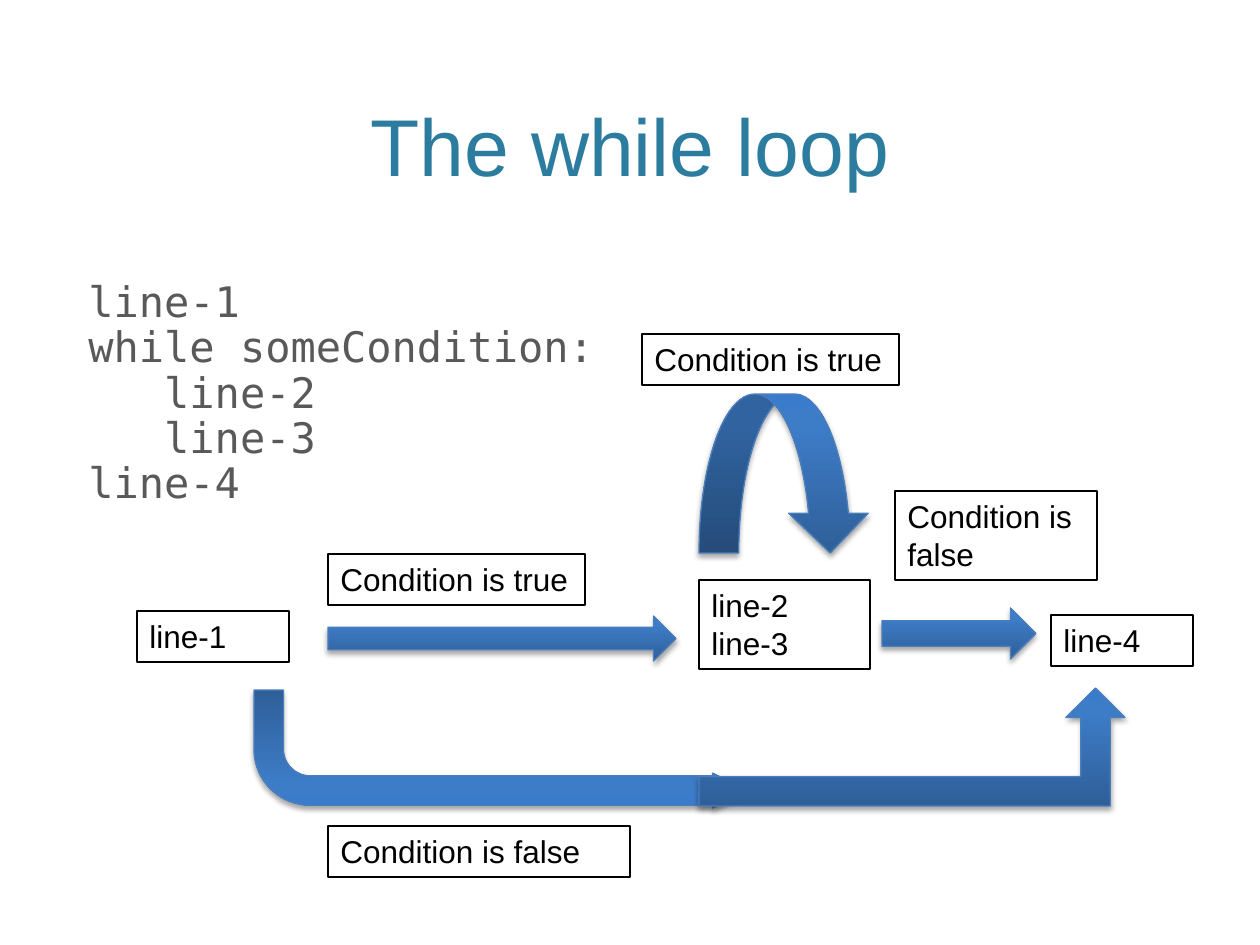
from dataclasses import dataclass

from lxml import etree
from pptx import Presentation
from pptx import util as u
from pptx.dml.color import RGBColor
from pptx.enum import shapes, text
from pptx.oxml.ns import qn

SCALE = 914400 / 126  # EMU per px


@dataclass(frozen=True)
class Theme:
    sans: str = "Arial"
    mono: str = "DejaVu Sans Mono"
    title_size: int = 46
    code_size: int = 24
    label_size: int = 18
    title: str = "2C7C9F"
    code: str = "595959"
    label: str = "000000"
    arrow_line: str = "4B7EBC"
    arrow_stops: tuple = ((0, "2F5F99"), (80, "3D7CC7"), (100, "3A7CCB"))


THEME = Theme()


def px(n):
    return u.Emu(round(n * SCALE))


def rgb(value):
    return RGBColor.from_string(value)


def add_text(slide, box, lines, font, size, color):
    sp = slide.shapes.add_textbox(*map(px, box))
    tf = sp.text_frame
    tf.word_wrap = True
    tf.text = "\n".join(lines)
    for p in tf.paragraphs:
        p.font.name, p.font.size = font, u.Pt(size)
        p.font.color.rgb = rgb(color)
    return sp


def add_title(slide, box, title):
    sp = add_text(slide, box, [title], THEME.sans, THEME.title_size, THEME.title)
    sp.text_frame.vertical_anchor = text.MSO_ANCHOR.BOTTOM
    sp.text_frame.paragraphs[0].alignment = text.PP_ALIGN.CENTER


def add_code(slide, box, lines):
    sp = add_text(slide, box, lines, THEME.mono, THEME.code_size, THEME.code)
    for p in sp.text_frame.paragraphs:
        p.line_spacing = 0.9


def add_label(slide, box, *lines):
    sp = add_text(slide, box, lines, THEME.sans, THEME.label_size, THEME.label)
    sp.text_frame.auto_size = text.MSO_AUTO_SIZE.SHAPE_TO_FIT_TEXT
    sp.line.color.rgb = rgb(THEME.label)
    sp.line.width = u.Pt(0.75)


def add_color(parent, value):
    return etree.SubElement(parent, qn("a:srgbClr"), val=value)


def add_arrow(slide, kind, box, adjustments=(), flip=False):
    """Block arrow with a vertical gradient and a soft shadow below."""
    sp = slide.shapes.add_shape(kind, *map(px, box))
    for i, value in enumerate(adjustments):
        sp.adjustments[i] = value
    props = sp._element.spPr
    if flip:
        props.find(qn("a:xfrm")).set("flipV", "1")

    sp.fill.gradient()
    sp.fill.gradient_angle = 90
    stops = props.find(".//" + qn("a:gsLst"))
    stops.clear()
    for pos, color in THEME.arrow_stops:
        add_color(etree.SubElement(stops, qn("a:gs"), pos=str(pos * 1000)), color)
    sp.line.color.rgb = rgb(THEME.arrow_line)
    sp.line.width = u.Pt(0.75)

    sp.shadow.inherit = False
    shadow = etree.SubElement(
        props.find(qn("a:effectLst")), qn("a:outerShdw"),
        blurRad=str(u.Pt(3.1)), dist=str(u.Pt(1.8)), dir="5400000", rotWithShape="0")
    etree.SubElement(add_color(shadow, "000000"), qn("a:alpha"), val="35000")


def add_flow(slide, left, top):
    """Flow of the loop, with its top left corner at the given point."""
    kinds = shapes.MSO_SHAPE
    one_line, two_lines = 51, 89
    branch_x, body_x, body_w = 191, 562, 171
    true_w, turn_h = 257, 118

    def at(x, y, w, h):
        return left + x, top + y, w, h

    add_arrow(slide, kinds.RIGHT_ARROW, at(branch_x, 282, 348, 45))
    add_arrow(slide, kinds.BENT_ARROW, at(117, 356, 494, turn_h),
              (0.25, 0.148, 0.299, 0.477), flip=True)
    add_arrow(slide, kinds.RIGHT_ARROW, at(745, 274, 154, 51))
    add_arrow(slide, kinds.BENT_UP_ARROW, at(body_x, 354, 426, turn_h))
    add_arrow(slide, kinds.CURVED_DOWN_ARROW, at(body_x, 60, body_w, 159))

    add_label(slide, at(0, 277, 152, one_line), "line-1")
    add_label(slide, at(body_x, 246, body_w, two_lines), "line-2", "line-3")
    add_label(slide, at(914, 281, 142, one_line), "line-4")
    for x, y in ((branch_x, 220), (505, 0)):
        add_label(slide, at(x, y, true_w, one_line), "Condition is true")
    for x, y, w, h in ((branch_x, 492, 302, one_line), (758, 157, 202, two_lines)):
        add_label(slide, at(x, y, w, h), "Condition is false")


def main():
    prs = Presentation()
    prs.slide_width, prs.slide_height = px(1260), px(945)
    slide = prs.slides.add_slide(prs.slide_layouts[6])
    add_title(slide, (76, 15, 1107, 184), "The while loop")
    add_code(slide, (76, 275, 1107, 544),
             ["line-1", "while someCondition:", "   line-2", "   line-3", "line-4"])
    add_flow(slide, 137, 334)
    prs.save("out.pptx")


if __name__ == "__main__":
    main()
